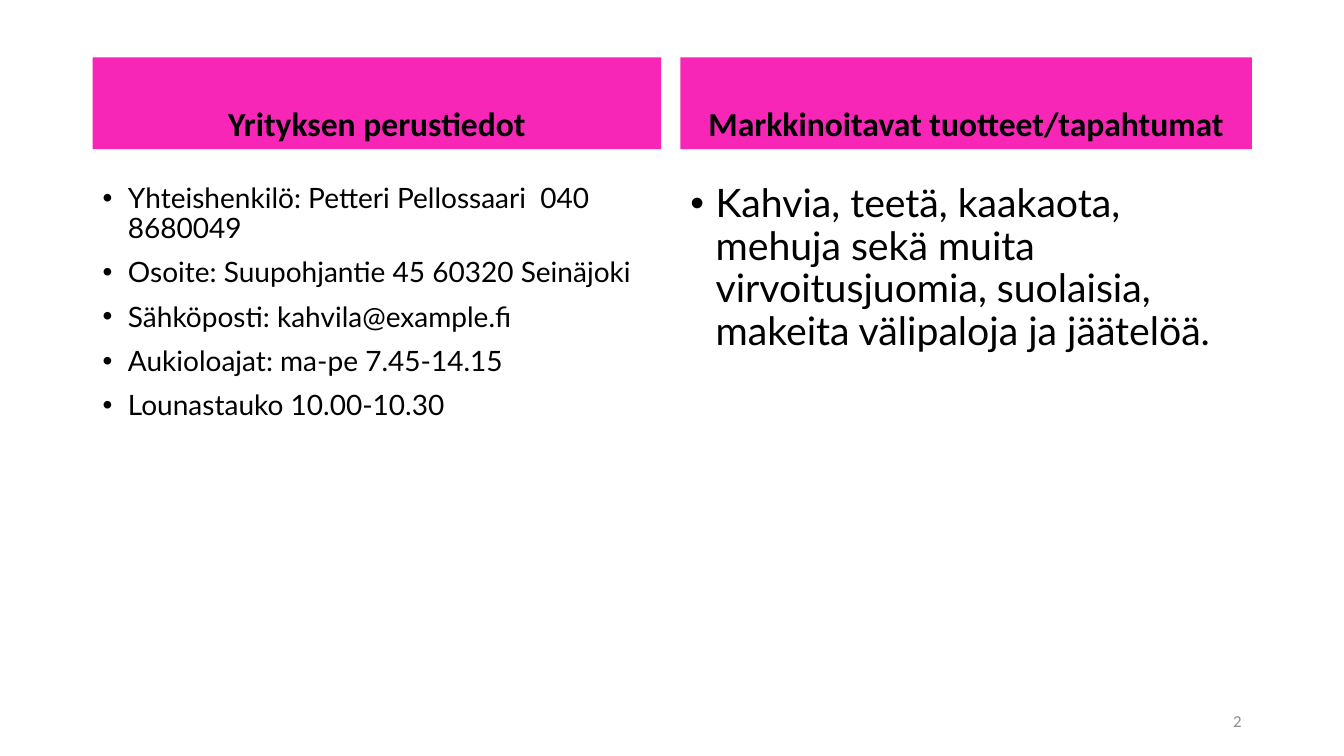
from lxml import etree
from pptx import Presentation
from pptx import util as u
from pptx.dml.color import RGBColor
from pptx.enum import text
from pptx.oxml.ns import qn

PINK = RGBColor(0xF8, 0x26, 0xB7)
BLACK = RGBColor(0, 0, 0)
GREY = RGBColor(0x8C, 0x8C, 0x8C)

HEADING_HEIGHT = 65.5
HEADING_GAP = 21.4

COMPANY_DETAILS = [
    "Yhteishenkilö: Petteri Pellossaari  040 8680049",
    "Osoite: Suupohjantie 45 60320 Seinäjoki",
    "Sähköposti: kahvila@example.fi",
    "Aukioloajat: ma-pe 7.45-14.15",
    "Lounastauko 10.00-10.30",
]
PRODUCTS = [
    "Kahvia, teetä, kaakaota, mehuja sekä muita virvoitusjuomia, "
    "suolaisia, makeita välipaloja ja jäätelöä.",
]


def place(shape, left, top, width, height):
    shape.left, shape.top = u.Pt(left), u.Pt(top)
    shape.width, shape.height = u.Pt(width), u.Pt(height)


def write(shape, lines, font, size, color, align, anchor, bold=False):
    frame = shape.text_frame
    frame.text = "\n".join(lines)
    frame.word_wrap = True
    frame.auto_size = text.MSO_AUTO_SIZE.NONE
    frame.vertical_anchor = anchor
    for paragraph in frame.paragraphs:
        paragraph.alignment = align
        for run in paragraph.runs:
            run.font.name = font
            run.font.size = u.Pt(size)
            run.font.bold = bold
            run.font.color.rgb = color


def space_paragraphs(shape):
    for paragraph in shape.text_frame.paragraphs:
        paragraph.line_spacing = 0.9
        paragraph.space_before = u.Pt(10)


def add_bullets(shape):
    for paragraph in shape.text_frame.paragraphs:
        properties = paragraph._p.get_or_add_pPr()
        properties.set("marL", str(u.Pt(18)))
        properties.set("indent", str(-u.Pt(18)))
        etree.SubElement(properties, qn("a:buFont")).set("typeface", "Arial")
        etree.SubElement(properties, qn("a:buChar")).set("char", "•")


def fill_column(heading, body, title, lines, size, left, top, width, height):
    place(heading, left, top, width, HEADING_HEIGHT)
    heading.fill.solid()
    heading.fill.fore_color.rgb = PINK
    write(heading, [title], "Calibri", 24, BLACK,
          text.PP_ALIGN.CENTER, text.MSO_ANCHOR.BOTTOM, bold=True)
    space_paragraphs(heading)

    offset = HEADING_HEIGHT + HEADING_GAP
    place(body, left, top + offset, width, height - offset)
    write(body, lines, "Lato", size, BLACK,
          text.PP_ALIGN.LEFT, text.MSO_ANCHOR.TOP)
    space_paragraphs(body)
    add_bullets(body)


def add_page_number(slide, number, left, top, width, height):
    shape = slide.shapes.add_textbox(
        u.Pt(left), u.Pt(top), u.Pt(width), u.Pt(height))
    write(shape, [number], "Calibri", 12, GREY,
          text.PP_ALIGN.RIGHT, text.MSO_ANCHOR.MIDDLE)


def main():
    presentation = Presentation()
    presentation.slide_width = u.Pt(960)
    presentation.slide_height = u.Pt(540)
    slide = presentation.slides.add_slide(presentation.slide_layouts[4])
    title = slide.shapes.title._element
    title.getparent().remove(title)

    placeholders = {shape.placeholder_format.idx: shape
                    for shape in slide.placeholders}
    fill_column(placeholders[1], placeholders[2], "Yrityksen perustiedot",
                COMPANY_DETAILS, 20, 66.2, 41, 406.1, 446.5)
    fill_column(placeholders[3], placeholders[4],
                "Markkinoitavat tuotteet/tapahtumat",
                PRODUCTS, 28, 486, 41, 408.2, 446.5)
    add_page_number(slide, "2", 678, 500.5, 216, 28.75)
    presentation.save("out.pptx")


if __name__ == "__main__":
    main()
